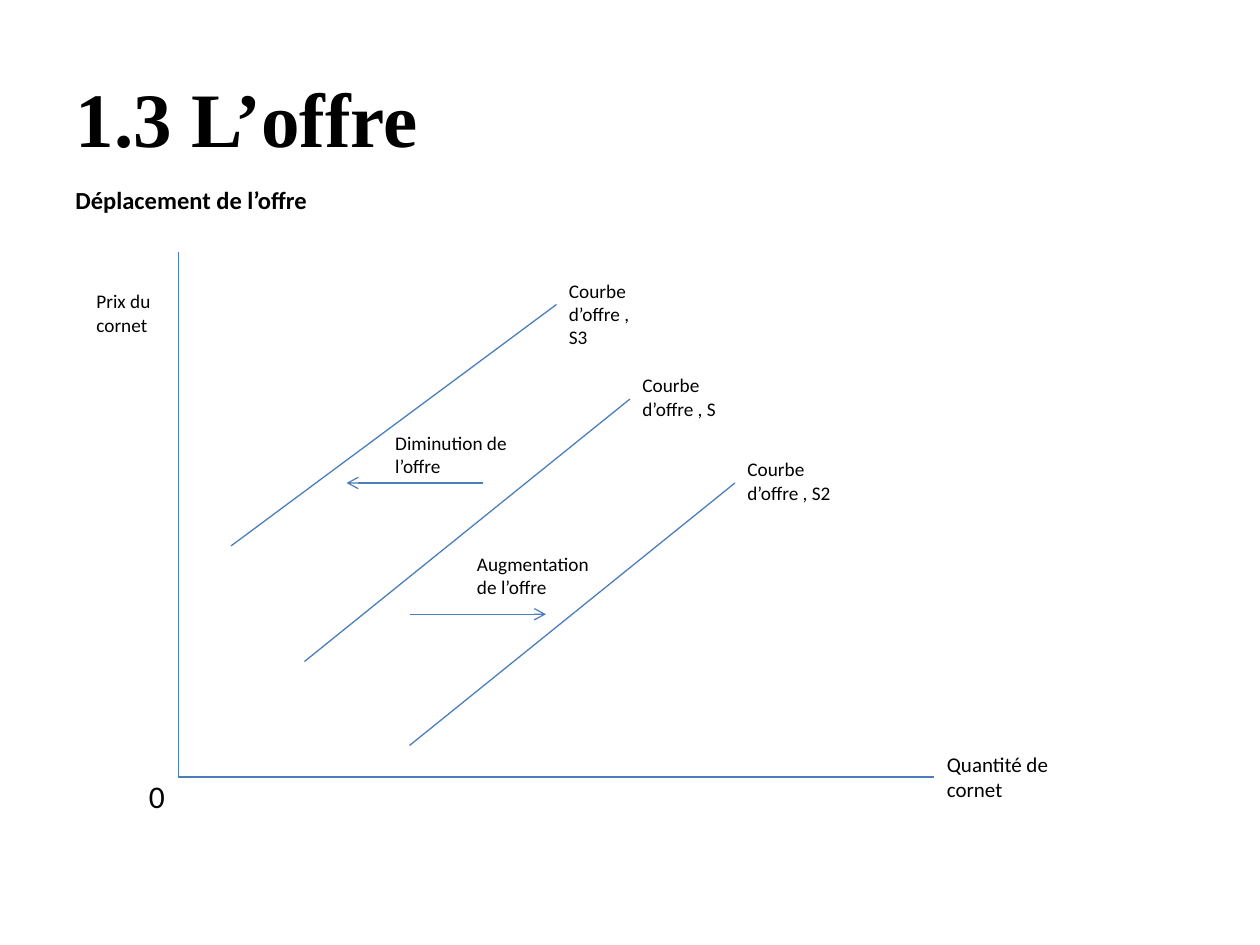
from dataclasses import dataclass

from lxml import etree
from pptx import Presentation
from pptx.dml.color import RGBColor
from pptx.enum.shapes import MSO_CONNECTOR
from pptx.enum.text import MSO_ANCHOR, MSO_AUTO_SIZE, PP_ALIGN
from pptx.oxml.ns import qn
from pptx.slide import Slide
from pptx.util import Pt

STRAIGHT = MSO_CONNECTOR.STRAIGHT
MIDDLE = MSO_ANCHOR.MIDDLE
GROW = MSO_AUTO_SIZE.SHAPE_TO_FIT_TEXT
LEFT = PP_ALIGN.LEFT

BLACK = RGBColor(0x00, 0x00, 0x00)
BLUE = RGBColor(0x4B, 0x7E, 0xBC)

TITLE_ONLY = 5


@dataclass(frozen=True)
class Segment:
    """A line between two points, in points."""
    x1: float
    y1: float
    x2: float
    y2: float
    arrow: bool = False


@dataclass(frozen=True)
class Label:
    """A text box, in points."""
    text: str
    left: float
    top: float
    width: float
    height: float
    size: float = 11
    bold: bool = False


AXES = [
    Segment(102, 144, 102, 444),
    Segment(102, 444, 534, 444),
]
SUPPLY_CURVES = [
    Segment(132, 312, 318, 174),
    Segment(174, 378, 360, 228),
    Segment(234, 426, 420, 276),
]
SHIFTS = [
    Segment(276, 276, 198, 276, arrow=True),
    Segment(234, 351, 312, 351, arrow=True),
]
LABELS = [
    Label("Déplacement de l’offre", 36, 102, 648, 24.5, size=14, bold=True),
    Label("Prix du cornet", 48, 162, 54, 34),
    Label("Quantité de cornet", 534, 426, 96, 36, size=12),
    Label("Diminution de l’offre", 218.75, 243, 93, 55.5),
    Label("Augmentation de l’offre", 265.5, 312, 83, 47.5),
    Label("Courbe d’offre , S2", 420, 258, 78, 34),
    Label("Courbe d’offre , S", 360, 210, 72, 34),
    Label("Courbe d’offre , S3", 318, 156, 60, 47.5),
    Label("0", 78, 440.5, 54, 29, size=18),
]


def draw_segment(slide: Slide, segment: Segment) -> None:
    connector = slide.shapes.add_connector(
        STRAIGHT, Pt(segment.x1), Pt(segment.y1), Pt(segment.x2), Pt(segment.y2))
    connector.line.color.rgb = BLUE
    connector.line.width = Pt(0.75)
    if segment.arrow:
        outline = connector.line._get_or_add_ln()
        etree.SubElement(outline, qn("a:tailEnd"), type="arrow")
    etree.SubElement(connector._element.spPr, qn("a:effectLst"))


def draw_label(slide: Slide, label: Label) -> None:
    box = slide.shapes.add_textbox(
        Pt(label.left), Pt(label.top), Pt(label.width), Pt(label.height))
    frame = box.text_frame
    frame.word_wrap = True
    frame.auto_size = GROW
    paragraph = frame.paragraphs[0]
    paragraph.text = label.text
    paragraph.font.name = "Calibri"
    paragraph.font.size = Pt(label.size)
    paragraph.font.bold = label.bold
    paragraph.font.color.rgb = BLACK


def draw_title(slide: Slide, text: str) -> None:
    title = slide.shapes.title
    title.left, title.top = Pt(36), Pt(21.6)
    title.width, title.height = Pt(648), Pt(90)
    title.text_frame.vertical_anchor = MIDDLE
    paragraph = title.text_frame.paragraphs[0]
    paragraph.text = text
    paragraph.alignment = LEFT
    paragraph.font.name = "Times New Roman"
    paragraph.font.size = Pt(44)
    paragraph.font.bold = True
    paragraph.font.color.rgb = BLACK


def main() -> None:
    deck = Presentation()
    deck.slide_width, deck.slide_height = Pt(720), Pt(540)
    slide = deck.slides.add_slide(deck.slide_layouts[TITLE_ONLY])

    draw_title(slide, "1.3 L’offre")

    # Supply diagram: axes, curves and the shifts between them
    for segment in AXES + SUPPLY_CURVES + SHIFTS:
        draw_segment(slide, segment)

    # Subtitle, axis names and curve names
    for label in LABELS:
        draw_label(slide, label)

    deck.save("out.pptx")


if __name__ == "__main__":
    main()
